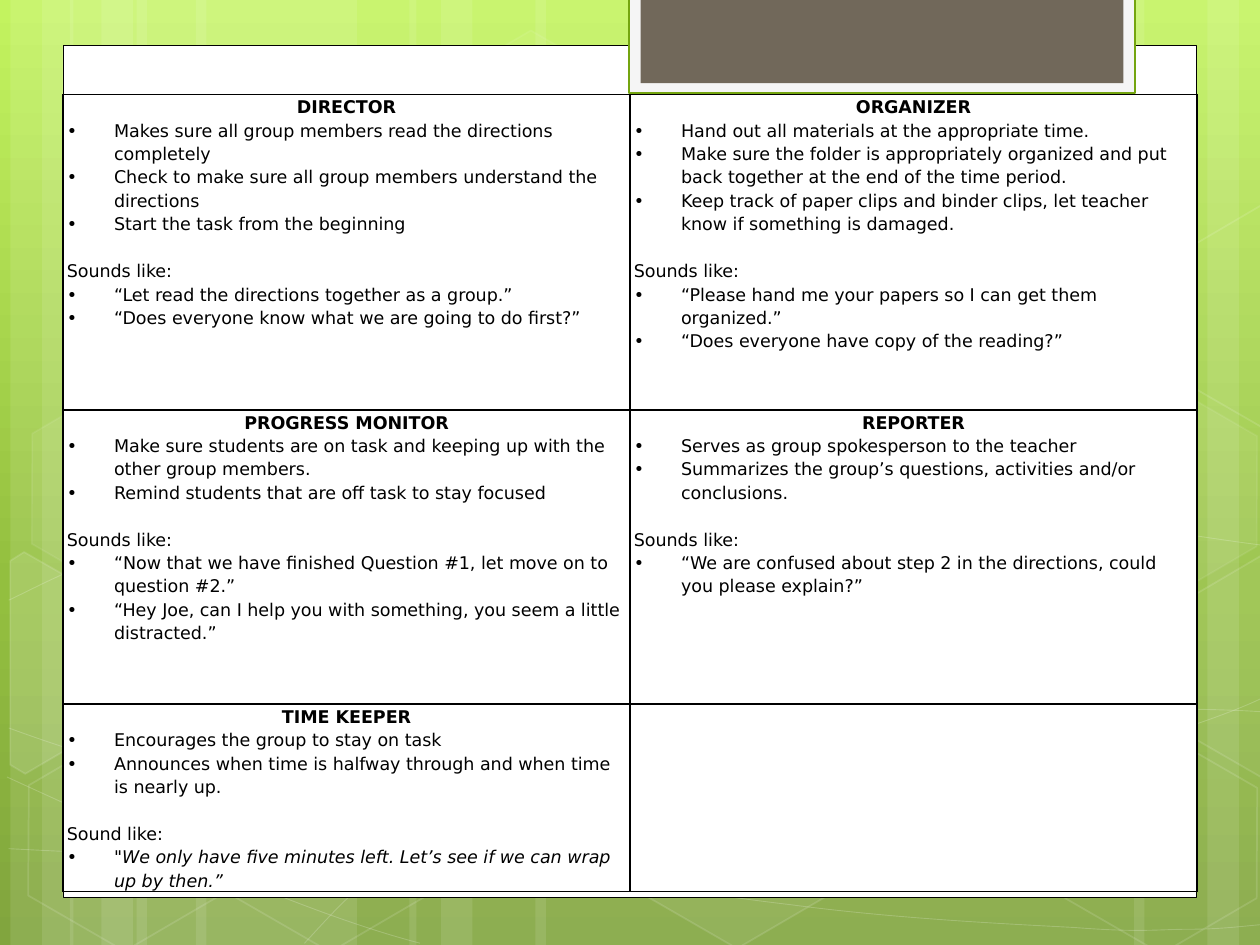
import copy
import math

import lxml.etree
import pptx
import pptx.dml.color
import pptx.enum.shapes
import pptx.enum.text
import pptx.oxml.ns
import pptx.util

Pt = pptx.util.Pt
qn = pptx.oxml.ns.qn
Kind = pptx.enum.shapes.MSO_SHAPE

COLORS = {
    "top": "C3F35F", "mid": "93BF3F", "base": "81A53E",
    "white": "FFFFFF", "black": "000000",
    "pale": "F5F5F5", "green": "74A510", "brown": "71685A",
}
FONT = "DejaVu Sans"
TILT = 30

BARS = [(78, 126), (6, 36), (24, 60), (112, 126), (40, 36), (58, 60),
        (528, 126), (690, 36), (648, 60), (306, 222), (234, 36), (252, 60)]

CURVES = [
    [(5, 485), (44, 487), (83, 489), (137, 488), (191, 487), (258, 486), (330, 479),
     (402, 472), (504, 458), (570, 444), (636, 431), (703, 409), (725, 397)],
    [(5, 343), (26, 333), (47, 321), (87, 310), (128, 300), (187, 284), (250, 279),
     (314, 274), (392, 273), (471, 279), (550, 284), (682, 307), (725, 312)],
    [(4, 444), (91, 484), (178, 523), (240, 539)],
    [(5, 416), (27, 424), (50, 432), (92, 443), (134, 454), (197, 472), (257, 485),
     (317, 497), (392, 510), (452, 517), (512, 525), (576, 528), (614, 530),
     (652, 533), (662, 531), (680, 531), (699, 531), (712, 529), (725, 528)],
    [(174, 539), (187, 525), (200, 510), (217, 498), (235, 485), (259, 470), (279, 460),
     (300, 450), (312, 446), (338, 438), (364, 431), (413, 421), (438, 416),
     (464, 411), (467, 411), (490, 410), (512, 408), (547, 405), (572, 405),
     (597, 404), (638, 405), (638, 405), (660, 405), (700, 405), (724, 407)],
]

HEXES = [(240.5, 26, 4, 8), (358, 424, 6, 12), (8, 425.5, 0, 12), (10, 224.5, 7, 8),
         (125.5, 426, 0, 12), (542, 326, 10, 12), (600.5, 427, 0, 12), (600.5, 226, 7, 8)]

LEFT = [(5.8, 320.4), (13.7, 315.4), (69.1, 347), (68.4, 410.4), (14.4, 442.1), (5.8, 437)]
RIGHT = [(666.7, 349.2), (720.7, 317.5), (726.5, 321.1),
         (726.5, 441.4), (721.4, 444.2), (666.7, 412.6)]

ROLES = [
    [("DIRECTOR",
      ["Makes sure all group members read the directions completely",
       "Check to make sure all group members understand the directions",
       "Start the task from the beginning"],
      "Sounds like:",
      ["“Let read the directions together as a group.”",
       "“Does everyone know what we are going to do first?”"]),
     ("ORGANIZER",
      ["Hand out all materials at the appropriate time.",
       "Make sure the folder is appropriately organized and put back together "
       "at the end of the time period.",
       "Keep track of paper clips and binder clips, let teacher know if something is damaged."],
      "Sounds like:",
      ["“Please hand me your papers so I can get them organized.”",
       "“Does everyone have copy of the reading?”"])],
    [("PROGRESS MONITOR",
      ["Make sure students are on task and keeping up with the other group members.",
       "Remind students that are off task to stay focused"],
      "Sounds like:",
      ["“Now that we have finished Question #1, let move on to question #2.”",
       "“Hey Joe, can I help you with something, you seem a little distracted.”"]),
     ("REPORTER",
      ["Serves as group spokesperson to the teacher",
       "Summarizes the group’s questions, activities and/or conclusions."],
      "Sounds like:",
      ["“We are confused about step 2 in the directions, could you please explain?”"])],
    [("TIME KEEPER",
      ["Encourages the group to stay on task",
       "Announces when time is halfway through and when time is nearly up."],
      "Sound like:",
      ["\"We only have five minutes left. Let’s see if we can wrap up by then.”"]),
     None],
]


def rgb(name):
    return pptx.dml.color.RGBColor.from_string(COLORS[name])


def tint(fill, name, alpha, node):
    fill.solid()
    fill.fore_color.rgb = rgb(name)
    if alpha < 100:
        color = node.find(qn("a:solidFill")).find(qn("a:srgbClr"))
        lxml.etree.SubElement(color, qn("a:alpha")).set("val", str(alpha * 1000))


def paint(shape, fill="white", alpha=100, line=None, width=1, clear=100):
    shape.shadow.inherit = False
    props = shape.element.spPr
    if alpha:
        tint(shape.fill, fill, alpha, props)
    else:
        shape.fill.background()
    if line:
        shape.line.width = Pt(width)
        tint(shape.line.fill, line, clear, props.find(qn("a:ln")))
    else:
        shape.line.fill.background()


def add_box(slide, x, y, w, h, kind=Kind.RECTANGLE, **look):
    shape = slide.shapes.add_shape(kind, Pt(x), Pt(y), Pt(w), Pt(h))
    paint(shape, **look)
    return shape


def add_hex(slide, x, y, alpha, clear):
    shape = add_box(slide, x, y, 126, 109.5, Kind.HEXAGON, alpha=alpha, line="white", clear=clear)
    shape.adjustments[0] = 0.285
    shape.rotation = TILT


def add_path(slide, points, close, **look):
    spots = [(Pt(x), Pt(y)) for x, y in points]
    pen = slide.shapes.build_freeform(*spots[0])
    pen.add_line_segments(spots[1:], close=close)
    shape = pen.convert_to_shape()
    paint(shape, line="white", **look)
    return shape


def add_curve(slide, knots):
    shape = add_path(slide, knots, False, alpha=0, width=0.5, clear=20)
    lines = list(shape.element.iter(qn("a:lnTo")))
    for start in range(0, len(lines), 3):
        bend = lxml.etree.Element(qn("a:cubicBezTo"))
        lines[start].addprevious(bend)
        for line in lines[start:start + 3]:
            bend.append(line[0])
            line.getparent().remove(line)


def add_shard(slide, points, mid, alpha):
    cos, sin = math.cos(math.radians(TILT)), math.sin(math.radians(TILT))
    turned = []
    for x, y in points:
        dx, dy = x - mid[0], y - mid[1]
        turned.append((mid[0] + dx * cos + dy * sin, mid[1] + dy * cos - dx * sin))
    add_path(slide, turned, True, alpha=alpha, clear=12).rotation = TILT


def set_back(slide):
    fill = slide.background.fill
    fill.gradient()
    fill.gradient_angle = 270
    stops = next(slide.element.iter(qn("a:gsLst")))
    stops.insert(1, copy.deepcopy(stops[0]))
    for stop, name, place in zip(fill.gradient_stops, ("top", "mid", "base"), (0, 0.62, 1)):
        stop.color.rgb = rgb(name)
        stop.position = place


def add_line(frame, text, bold=False, slant=False, bullet=False, gap=0):
    para = frame.paragraphs[0] if bold else frame.add_paragraph()
    para.line_spacing = 1.15
    if gap:
        para.space_before = Pt(gap)
    if bold:
        para.alignment = pptx.enum.text.PP_ALIGN.CENTER
    if bullet:
        props = para._p.get_or_add_pPr()
        props.set("marL", str(Pt(27)))
        props.set("indent", str(Pt(-27)))
        lxml.etree.SubElement(props, qn("a:buFont")).set("typeface", FONT)
        lxml.etree.SubElement(props, qn("a:buChar")).set("char", "•")
    run = para.add_run()
    run.text = text
    font = run.font
    font.name, font.size, font.bold, font.italic = FONT, Pt(10), bold, slant
    font.color.rgb = rgb("black")


def add_edge(cell):
    props = cell._tc.get_or_add_tcPr()
    for side in ("lnL", "lnR", "lnT", "lnB"):
        edge = lxml.etree.SubElement(props, qn("a:" + side), w=str(Pt(1)))
        fill = lxml.etree.SubElement(edge, qn("a:solidFill"))
        lxml.etree.SubElement(fill, qn("a:srgbClr"), val=COLORS["black"])


def fill_cell(cell, role):
    add_edge(cell)
    cell.fill.background()
    cell.margin_left = cell.margin_right = Pt(2.2)
    cell.margin_top = cell.margin_bottom = 0
    if not role:
        return
    title, tasks, cue, quotes = role
    frame = cell.text_frame
    add_line(frame, title, bold=True)
    for task in tasks:
        add_line(frame, task, bullet=True)
    add_line(frame, cue, gap=13.4)
    for quote in quotes:
        add_line(frame, quote, bullet=True, slant=title == "TIME KEEPER")


def add_roles(slide):
    heights = (180.2, 168.2, 107.2)
    table = slide.shapes.add_table(3, 2, Pt(36), Pt(54), Pt(648), Pt(sum(heights))).table
    table.first_row = table.horz_banding = False
    for row, height, roles in zip(table.rows, heights, ROLES):
        row.height = Pt(height)
        for cell, role in zip(row.cells, roles):
            fill_cell(cell, role)


def main():
    deck = pptx.Presentation()
    deck.slide_width, deck.slide_height = Pt(720), Pt(540)
    slide = deck.slides.add_slide(deck.slide_layouts[6])
    set_back(slide)
    for x, width in BARS:
        add_box(slide, x, 0, width, 540, alpha=10)
    for knots in CURVES:
        add_curve(slide, knots)
    for item in HEXES:
        add_hex(slide, *item)
    add_shard(slide, LEFT, (25.9, 385.2), 10)
    add_shard(slide, RIGHT, (709.2, 374.4), 4)
    add_shard(slide, [(x, y - 200.2) for x, y in RIGHT], (709.2, 174.2), 0)
    add_box(slide, 36, 25.9, 648, 487.1, line="black", width=0.5)
    add_box(slide, 359.3, -1.5, 289.4, 54.5, fill="pale", line="green", width=1.25)
    add_box(slide, 366, -1.5, 276, 49, fill="brown")
    add_roles(slide)
    deck.save("out.pptx")


if __name__ == "__main__":
    main()
